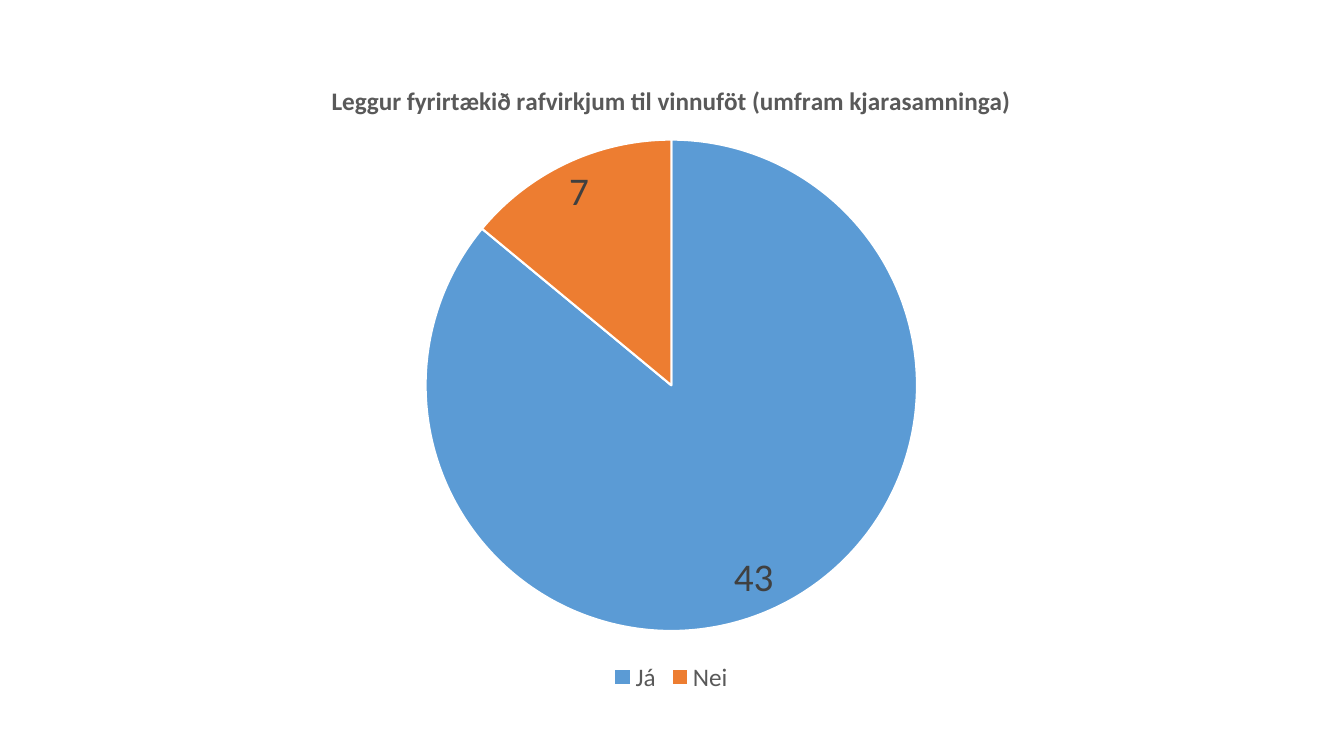
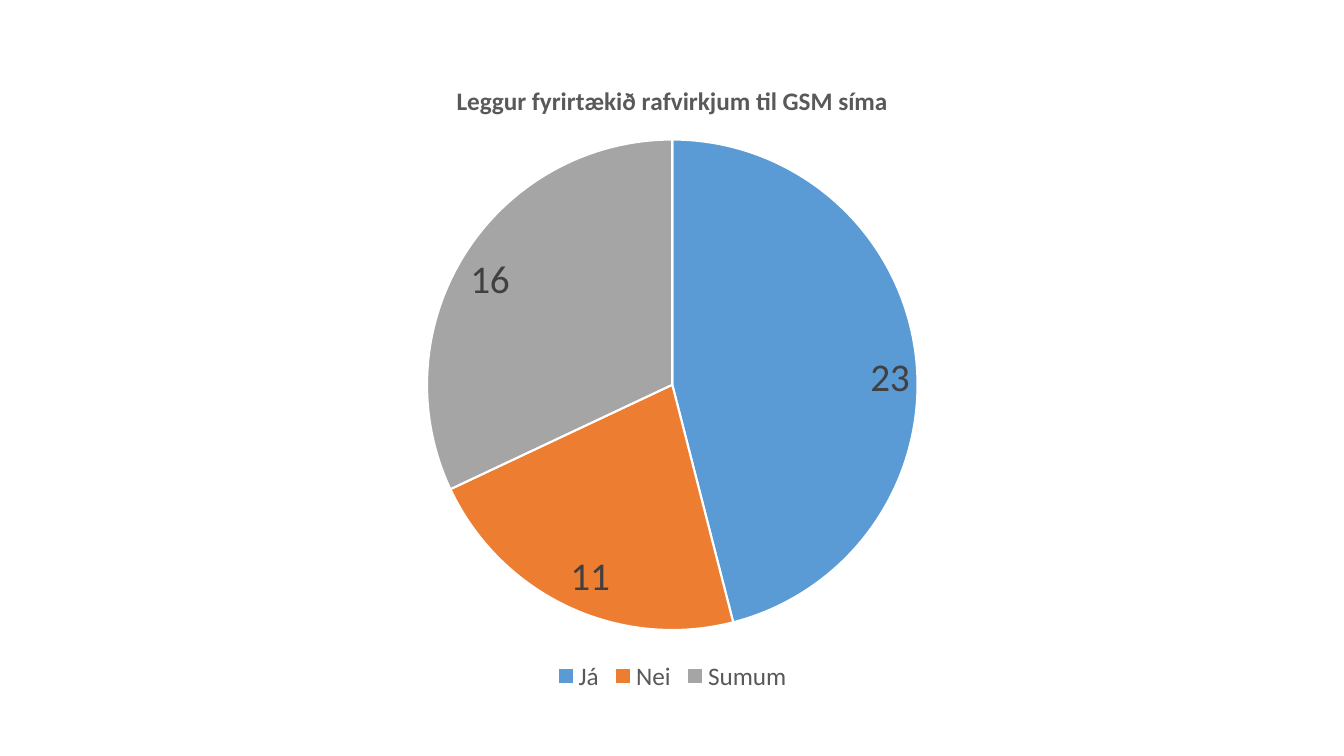
from dataclasses import dataclass

from lxml.etree import SubElement
from pptx import Presentation
from pptx.chart.chart import Chart
from pptx.chart.data import CategoryChartData
from pptx.dml.color import RGBColor
from pptx.enum.chart import XL_CHART_TYPE, XL_LABEL_POSITION, XL_LEGEND_POSITION
from pptx.oxml.ns import qn
from pptx.presentation import Presentation as Deck
from pptx.text.text import Font, TextFrame
from pptx.util import Pt

COLORS = {
    "Já": "5B9BD5",
    "Nei": "ED7D31",
    "Sumum": "A5A5A5",
    "divider": "FFFFFF",
    "text": "595959",
    "value": "404040",
}
FONT = "Calibri"
BLANK_LAYOUT = 6
CHART_TOP = 43.2
# Fractions of the chart area taken by the pie
PIE_AREA = {"x": 0.28, "y": 0.12, "w": 0.44, "h": 0.78}


@dataclass(frozen=True)
class Question:
    title: str
    answers: dict[str, int]
    left: float
    width: float
    height: float


QUESTIONS = [
    Question(
        "Leggur fyrirtækið rafvirkjum til vinnuföt (umfram kjarasamninga)",
        {"Já": 43, "Nei": 7},
        left=80.64, width=797.76, height=455.04,
    ),
    Question(
        "Leggur fyrirtækið rafvirkjum til GSM síma",
        {"Já": 23, "Nei": 11, "Sumum": 16},
        left=82.08, width=796.32, height=454.32,
    ),
]


def rgb(name: str) -> RGBColor:
    return RGBColor.from_string(COLORS[name])


def style_font(font: Font, size: float, color: str = "text", bold: bool = False) -> None:
    font.name = FONT
    font.size = Pt(size)
    font.bold = bold
    font.color.rgb = rgb(color)


def write_text(frame: TextFrame, text: str, *, size: float,
               color: str = "text", bold: bool = False) -> None:
    run = frame.paragraphs[0].add_run()
    run.text = text
    style_font(run.font, size, color, bold)


def place_pie(chart: Chart) -> None:
    """Fix the plot to PIE_AREA, so both pies have the same proportions."""
    plot_area = chart.element.find(".//" + qn("c:plotArea"))
    layout = plot_area.find(qn("c:layout"))
    if layout is None:
        layout = SubElement(plot_area, qn("c:layout"))
        plot_area.insert(0, layout)
    manual = SubElement(layout, qn("c:manualLayout"))
    settings = {"layoutTarget": "inner", "xMode": "edge", "yMode": "edge", **PIE_AREA}
    for tag, value in settings.items():
        SubElement(manual, qn(f"c:{tag}")).set("val", str(value))


def add_question_slide(deck: Deck, question: Question) -> None:
    slide = deck.slides.add_slide(deck.slide_layouts[BLANK_LAYOUT])
    data = CategoryChartData()
    data.categories = list(question.answers)
    data.add_series("Series 1", list(question.answers.values()))
    chart = slide.shapes.add_chart(
        XL_CHART_TYPE.PIE, Pt(question.left), Pt(CHART_TOP),
        Pt(question.width), Pt(question.height), data,
    ).chart
    style_font(chart.font, 10)

    chart.has_title = True
    write_text(chart.chart_title.text_frame, question.title, size=18, bold=True)
    chart.chart_title.include_in_layout = False

    chart.has_legend = True
    chart.legend.position = XL_LEGEND_POSITION.BOTTOM
    chart.legend.include_in_layout = False
    style_font(chart.legend.font, 18)

    pie = chart.plots[0]
    pie.vary_by_categories = True
    pie.has_data_labels = True
    pie.data_labels.show_value = True
    pie.data_labels.show_percentage = False
    pie.data_labels.position = XL_LABEL_POSITION.INSIDE_END
    style_font(pie.data_labels.font, 28, "value")

    for index, answer in enumerate(question.answers):
        slice_format = pie.series[0].points[index].format
        slice_format.fill.solid()
        slice_format.fill.fore_color.rgb = rgb(answer)
        slice_format.line.color.rgb = rgb("divider")
        slice_format.line.width = Pt(1.5)
    place_pie(chart)


def main() -> None:
    deck = Presentation()
    deck.slide_width, deck.slide_height = Pt(960), Pt(540)
    for question in QUESTIONS:
        add_question_slide(deck, question)
    deck.save("out.pptx")


if __name__ == "__main__":
    main()
